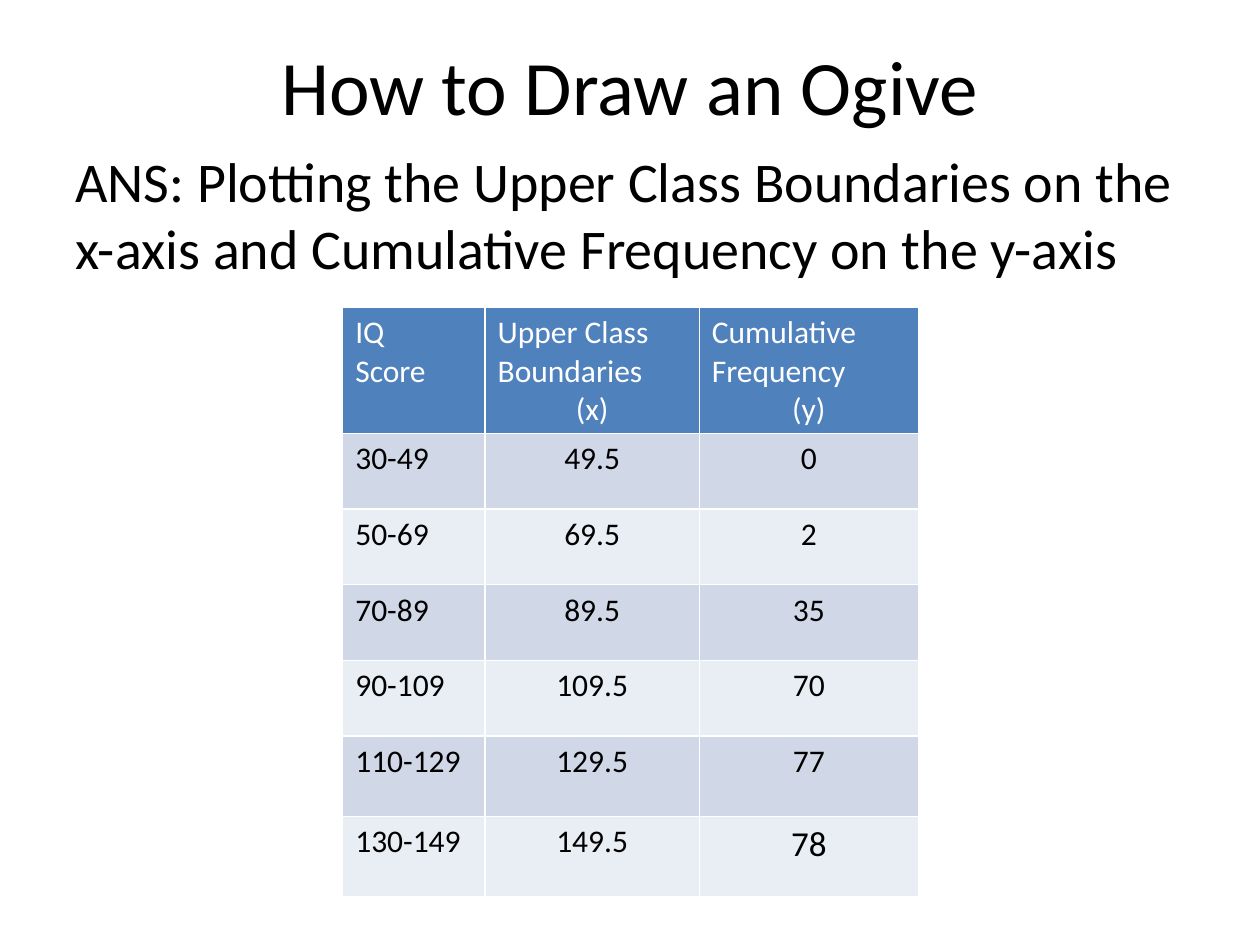
from dataclasses import dataclass

from lxml.etree import SubElement
from pptx import Presentation
from pptx.dml.color import RGBColor as Rgb
from pptx.enum.text import MSO_ANCHOR as Anchor, PP_ALIGN as Align
from pptx.oxml.ns import qn
from pptx.util import Pt

PX = 9144  # EMU in one px, at 100 px to the inch


@dataclass(frozen=True)
class Theme:
    font: str = "Calibri"
    ink: str = "000000"
    paper: str = "FFFFFF"
    header: str = "4F81BD"
    bands: tuple = ("D0D8E8", "E9EDF4")
    title_size: int = 44
    body_size: int = 32
    cell_size: int = 18
    total_size: int = 20
    border: int = 1


THEME = Theme()
TITLE = "How to Draw an Ogive"
ANSWER = ("ANS: Plotting the Upper Class Boundaries on the x-axis "
          "and Cumulative Frequency on the y-axis")
HEADINGS = (("IQ", "Score"),
            ("Upper Class Boundaries", "(x)"),
            ("Cumulative Frequency", "(y)"))
SCORES = (("30-49", "49.5", "0"),
          ("50-69", "69.5", "2"),
          ("70-89", "89.5", "35"),
          ("90-109", "109.5", "70"),
          ("110-129", "129.5", "77"),
          ("130-149", "149.5", "78"))
COLUMN_WIDTHS = (113, 170, 174)
ROW_HEIGHTS = (94, 60, 60, 60, 60, 64, 64)


def scaled(box):
    return [length * PX for length in box]


def set_format(target, values):
    for name, value in values.items():
        setattr(target, name, value)


def write(para, text, size, color=THEME.ink, align=Align.LEFT):
    para.alignment = align
    span = para.add_run()
    span.text = text
    set_format(span.font, {"name": THEME.font, "size": Pt(size), "bold": False})
    span.font.color.rgb = Rgb.from_string(color)


def add_title(page, box):
    title = page.shapes.title
    set_format(title, dict(zip(("left", "top", "width", "height"), scaled(box))))
    set_format(title.text_frame, {"word_wrap": True, "vertical_anchor": Anchor.MIDDLE})
    write(title.text_frame.paragraphs[0], TITLE, THEME.title_size, align=Align.CENTER)


def add_answer(page, box):
    frame = page.shapes.add_textbox(*scaled(box)).text_frame
    frame.word_wrap = True
    para = frame.paragraphs[0]
    para.space_before = Pt(0.2 * THEME.body_size)
    write(para, ANSWER, THEME.body_size)


def paint_cell(cell, fill):
    """Give the cell its borders, then its fill, in the order the schema asks."""
    properties = cell._tc.get_or_add_tcPr()
    for side in ("a:lnL", "a:lnR", "a:lnT", "a:lnB"):
        line = SubElement(properties, qn(side), w=str(Pt(THEME.border)))
        SubElement(SubElement(line, qn("a:solidFill")), qn("a:srgbClr"), val=THEME.paper)
    cell.fill.solid()
    cell.fill.fore_color.rgb = Rgb.from_string(fill)


def fill_heading(cell, lines, last_align):
    paint_cell(cell, THEME.header)
    frame = cell.text_frame
    write(frame.paragraphs[0], lines[0], THEME.cell_size, THEME.paper)
    write(frame.add_paragraph(), lines[1], THEME.cell_size, THEME.paper, last_align)


def add_frequency_table(page, box):
    table = page.shapes.add_table(len(ROW_HEIGHTS), len(COLUMN_WIDTHS), *scaled(box)).table
    for column, width in zip(table.columns, COLUMN_WIDTHS):
        column.width = width * PX
    for row, height in zip(table.rows, ROW_HEIGHTS):
        row.height = height * PX

    aligns = (Align.LEFT, Align.CENTER, Align.CENTER)
    for column, (lines, align) in enumerate(zip(HEADINGS, aligns)):
        fill_heading(table.cell(0, column), lines, align)
    for row, values in enumerate(SCORES):
        for column, (text, align) in enumerate(zip(values, aligns)):
            cell = table.cell(row + 1, column)
            paint_cell(cell, THEME.bands[row % 2])
            is_total = row == len(SCORES) - 1 and column == len(values) - 1
            size = THEME.total_size if is_total else THEME.cell_size
            write(cell.text_frame.paragraphs[0], text, size, align=align)


def main():
    deck = Presentation()
    set_format(deck, {"slide_width": 1000 * PX, "slide_height": 750 * PX})
    page = deck.slides.add_slide(deck.slide_layouts.get_by_name("Title Only"))
    add_title(page, (50, 23, 900, 88))
    add_answer(page, (50, 111, 900, 495))
    add_frequency_table(page, (272, 244, sum(COLUMN_WIDTHS), sum(ROW_HEIGHTS)))
    deck.save("out.pptx")


if __name__ == "__main__":
    main()
